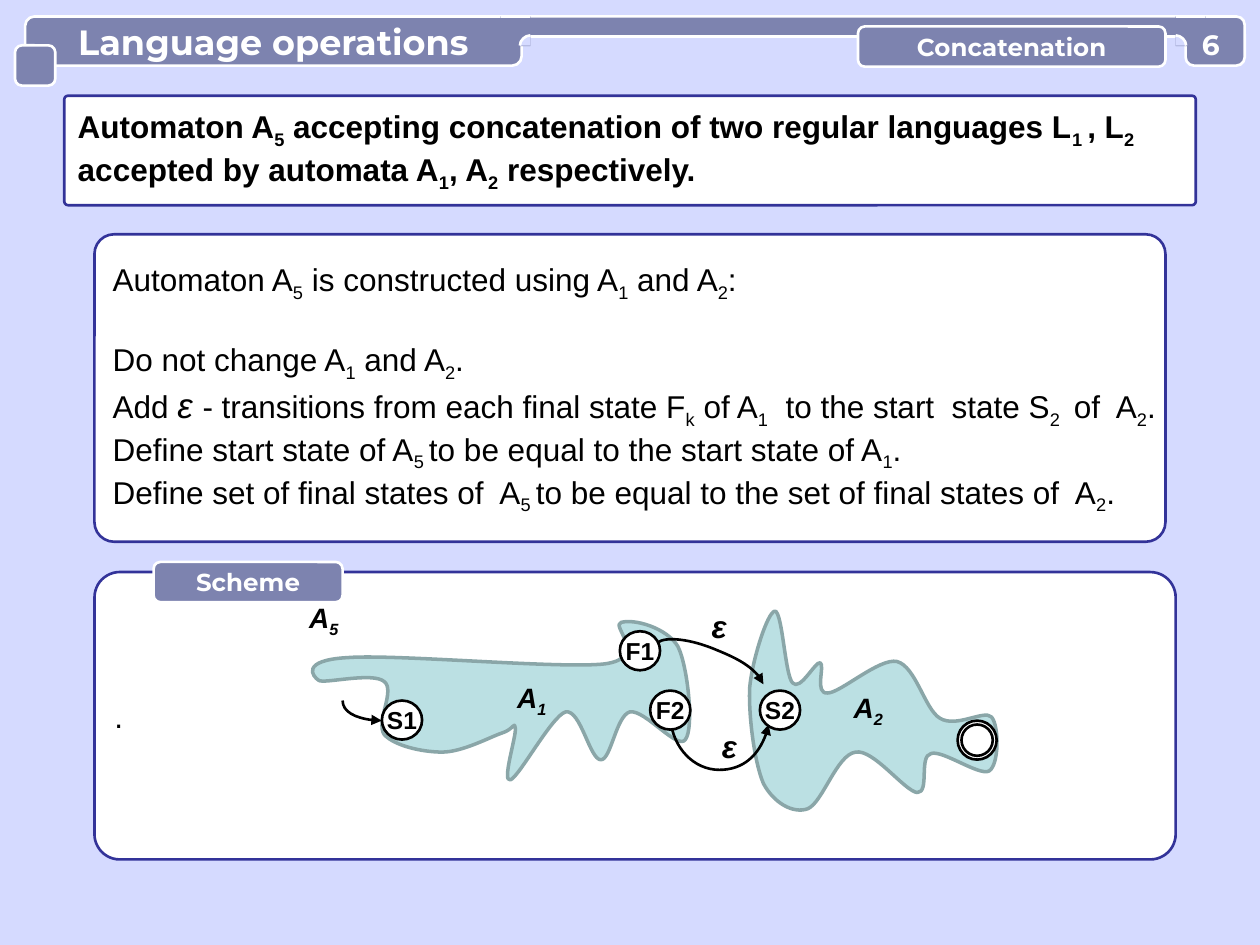
from lxml import etree
from pptx import Presentation
from pptx.dml.color import RGBColor
from pptx.enum.shapes import MSO_CONNECTOR as Link, MSO_SHAPE as Kind
from pptx.enum.text import MSO_ANCHOR as Anchor, PP_ALIGN as Align
from pptx.oxml.ns import qn
from pptx.util import Pt

PAGE, SLATE, NAVY = "D5DAFF", "7D83AF", "333399"
WHITE, BLACK = "FFFFFF", "000000"
TEAL, GREY = "BBE0E3", "8AA6A8"

RULE = ["Automaton A~5~ accepting concatenation of two regular languages L~1 ~, L~2~",
        "accepted by automata A~1~, A~2~ respectively."]
STEPS = ["Automaton A~5~ is constructed using A~1~ and A~2~:",
         "Do not change A~1~ and A~2~.",
         "Add ~ε ~- transitions from each final state F~k~ of A~1~  to the start  state S~2 ~ of  A~2~.",
         "Define start state of A~5 ~to be equal to the start state of A~1~.",
         "Define set of final states of  A~5 ~to be equal to the set of final states of  A~2~."]

# Outlines: a start point, then three points for each Bézier curve.
BLOB1 = [
    (286.6, 419),
    (280.1, 421.2), (264.2, 429.8), (252.7, 429.8),
    (241.2, 429.8), (225.4, 426.2), (219.6, 419.8),
    (214.6, 412.6), (226.1, 394.6), (219.6, 389.5),
    (213.1, 383.8), (185, 391), (182.2, 388.8),
    (178.6, 386.6), (171.4, 377.3), (198.7, 375.8),
    (226.1, 373.7), (319.7, 382.3), (345.6, 379.4),
    (371.5, 375.8), (348.5, 357.1), (355, 355.7),
    (362.2, 353.5), (380.9, 358.6), (387.4, 369.4),
    (393.1, 380.9), (396.7, 416.2), (391.7, 422.6),
    (387.4, 429.1), (368.6, 405.4), (360, 406.8),
    (352.1, 409), (349.2, 434.2), (343.4, 434.2),
    (337, 434.2), (331.9, 405.4), (323.3, 406.8),
    (315.4, 409), (296.6, 444.2), (291.6, 445.7),
    (286.6, 447.1), (295.2, 420.5), (294.5, 416.2),
    (293.8, 411.8), (293.8, 416.9), (286.6, 419)]
BLOB2 = [
    (473, 396),
    (480.2, 396), (502.6, 375.8), (512.6, 378),
    (523.4, 380.9), (528.5, 405.4), (537.1, 410.4),
    (546.5, 416.2), (562.3, 405.4), (566.6, 409.7),
    (571, 414.7), (571, 437), (565.2, 440.6),
    (559.4, 443.5), (538.6, 428.4), (532.1, 430.6),
    (524.9, 432), (531.4, 452.9), (524.2, 452.9),
    (517, 452.2), (499, 427.7), (488.9, 429.8),
    (478.1, 431.3), (470.2, 458.6), (461.5, 462.2),
    (452.9, 465.1), (442.1, 458.6), (436.3, 447.8),
    (431.3, 436.3), (427.7, 409.7), (428.4, 393.1),
    (429.8, 377.3), (438.5, 349.9), (442.8, 349.2),
    (447.1, 349.2), (448.6, 385.9), (452.9, 390.2),
    (457.2, 395.3), (465.8, 378), (468.7, 378.7),
    (471.6, 380.2), (465.1, 396.7), (473, 396)]
ARCS = [
    [(436.3, 391), (434.9, 385.2), (424.1, 377.3), (409.7, 371.5),
     (394.6, 365), (380.2, 363.6), (375.8, 367.2)],
    [(218.2, 411.8), (205.9, 411.8), (195.8, 406.8), (195.8, 400.3)],
    [(439.2, 414), (436.3, 429.1), (424.8, 439.9), (411.1, 439.9),
     (396.7, 439.9), (384.5, 427.7), (383, 410.4)]]


def tint(code):
    return RGBColor.from_string(code)


def paint(shape, fill, line, width=1.5):
    shape.shadow.inherit = False
    if fill:
        shape.fill.solid()
        shape.fill.fore_color.rgb = tint(fill)
    else:
        shape.fill.background()
    if line:
        shape.line.color.rgb = tint(line)
        shape.line.width = Pt(width)
    else:
        shape.line.fill.background()
    return shape


def write(shape, *lines, font="Arial", size=18, color=BLACK, bold=False, slant=False,
          align=Align.LEFT, anchor=Anchor.MIDDLE, gap=0, wrap=False):
    """Fill a shape with text; ~ encloses subscripts, or a larger italic ε."""
    frame = shape.text_frame
    frame.word_wrap, frame.vertical_anchor = wrap, anchor
    for i, line in enumerate(lines):
        para = frame.paragraphs[0] if i == 0 else frame.add_paragraph()
        para.alignment = align
        if i == 1 and gap:
            para.space_before = Pt(gap)
        for j, part in enumerate(line.split("~")):
            if not part:
                continue
            run = para.add_run()
            run.text = part
            greek = j % 2 == 1 and part.startswith("ε")
            face = run.font
            face.name, face.bold, face.italic = font, bold, slant or greek
            face.size, face.color.rgb = Pt(size + 2 * greek), tint(color)
            if j % 2 and not greek:
                run._r.get_or_add_rPr().set("baseline", "-25000")


def box(slide, area, fill=SLATE, line=WHITE, round=None, kind=Kind.ROUNDED_RECTANGLE):
    shape = slide.shapes.add_shape(kind, *map(Pt, area))
    if round is not None:
        shape.adjustments[0] = round
    return paint(shape, fill, line)


def panel(slide, area, round, *lines, **form):
    write(box(slide, area, WHITE, NAVY, round), *lines, **form)


def tab(slide, area, text, size=14, round=0.17):
    write(box(slide, area, round=round), text, font="Montserrat", size=size,
          color=WHITE, bold=True, align=Align.CENTER)


def label(slide, area, text, inset=0, **form):
    note = slide.shapes.add_textbox(*map(Pt, area))
    if not inset:
        frame = note.text_frame
        frame.margin_left = frame.margin_right = frame.margin_top = frame.margin_bottom = 0
    write(note, text, bold=True, **form)


def curve(slide, points, fill=None, line=None, width=1.5, close=False):
    pts = [(Pt(x), Pt(y)) for x, y in points]
    pen = slide.shapes.build_freeform(*pts[0], scale=1.0)
    pen.add_line_segments(pts[1:], close=close)
    shape = paint(pen.convert_to_shape(), fill, line, width)
    track = shape._element.find(".//" + qn("a:path"))
    steps = track.findall(qn("a:lnTo"))
    for i in range(0, len(steps), 3):
        bend = etree.Element(qn("a:cubicBezTo"))
        steps[i].addprevious(bend)
        for step in steps[i:i + 3]:
            bend.append(step[0])
            track.remove(step)
    return shape


def arrow(slide, points):
    """Draw a curve with its arrowhead at the first point."""
    shape = curve(slide, points, line=BLACK)
    etree.SubElement(shape.line._get_or_add_ln(), qn("a:headEnd"), type="triangle")


def joint(slide, x, way):
    """Round the inner corner where the thin bar meets a tab."""
    far, top, low, end = x + 17 * way, 9.4, 26, x + 6 * way
    box(slide, (min(x, far), top, 17, 17), line=None, kind=Kind.RECTANGLE)
    rule = slide.shapes.add_connector(Link.STRAIGHT, Pt(x), Pt(top), Pt(far), Pt(top))
    rule.line.color.rgb, rule.line.width = tint(WHITE), Pt(1.5)
    etree.SubElement(rule._element.spPr, qn("a:effectLst"))
    arc = [(x, 20.2), (x + 3 * way, 20.2), (end, 23), (end, low)]
    sides = [(end, low), (x, low), (x, low), (x, low), arc[0], arc[0]]
    curve(slide, arc + sides, fill=PAGE, close=True)
    curve(slide, arc, line=WHITE)


def state(slide, x, y, name):
    disc = box(slide, (x, y, 23, 22.3), WHITE, BLACK, kind=Kind.OVAL)
    write(disc, name, size=14, bold=True, align=Align.CENTER)


def header(slide):
    tab(slide, (14.4, 9.4, 283.7, 28.1), "Language operations", 20, 0.188)
    box(slide, (292.3, 9.4, 391, 11.5), round=0.5)
    joint(slide, 303.1, -1)
    box(slide, (8.6, 25.9, 23, 23), round=0.17)
    box(slide, (677.5, 9.4, 33.8, 28.1), round=0.17)
    joint(slide, 671.8, 1)
    tab(slide, (490.3, 15.1, 175.7, 23), "Concatenation")
    label(slide, (677.5, 15.8, 28.8, 19.4), "6", font="Montserrat", size=16,
          color=WHITE, align=Align.CENTER, wrap=True)


def scheme(slide):
    for blob in (BLOB1, BLOB2):
        curve(slide, blob, TEAL, GREY, 2, True)
    for arc in ARCS:
        arrow(slide, arc)
    for x, y, name in ((434.2, 394.6, "S2"), (218.2, 400.3, "S1"),
                       (354.2, 360.7, "F1"), (371.5, 394.6, "F2")):
        state(slide, x, y, name)
    for inset in (0, 2.2):
        side = 22.3 - 2 * inset
        box(slide, (547.2 + inset, 411.8 + inset, side, side), WHITE, BLACK, kind=Kind.OVAL)
    for x, y, text in ((292.3, 388.8, "A~1~"), (484.6, 394.6, "A~2~"), (173.5, 343.4, "A~5~")):
        label(slide, (x, y, 23, 23), text, size=16, slant=True,
              align=Align.CENTER, anchor=Anchor.TOP, wrap=True)
    for x, y in ((399.6, 343.4), (405.4, 411.8)):
        label(slide, (x, y, 22.3, 28.8), "ε", inset=1, slant=True, anchor=Anchor.TOP)
    tab(slide, (87.8, 321.1, 108, 23), "Scheme")


def main():
    deck = Presentation()
    deck.slide_width, deck.slide_height = Pt(720), Pt(540)
    slide = deck.slides.add_slide(deck.slide_layouts[6])
    slide.background.fill.solid()
    slide.background.fill.fore_color.rgb = tint(PAGE)
    panel(slide, (54, 326.9, 617.8, 164.2), 0.088, ".")
    panel(slide, (36.7, 54.7, 646.6, 62.6), 0.035, *RULE, bold=True)
    header(slide)
    panel(slide, (54, 133.9, 612, 175.7), 0.064, *STEPS, gap=21)
    scheme(slide)
    deck.save("out.pptx")


if __name__ == "__main__":
    main()
